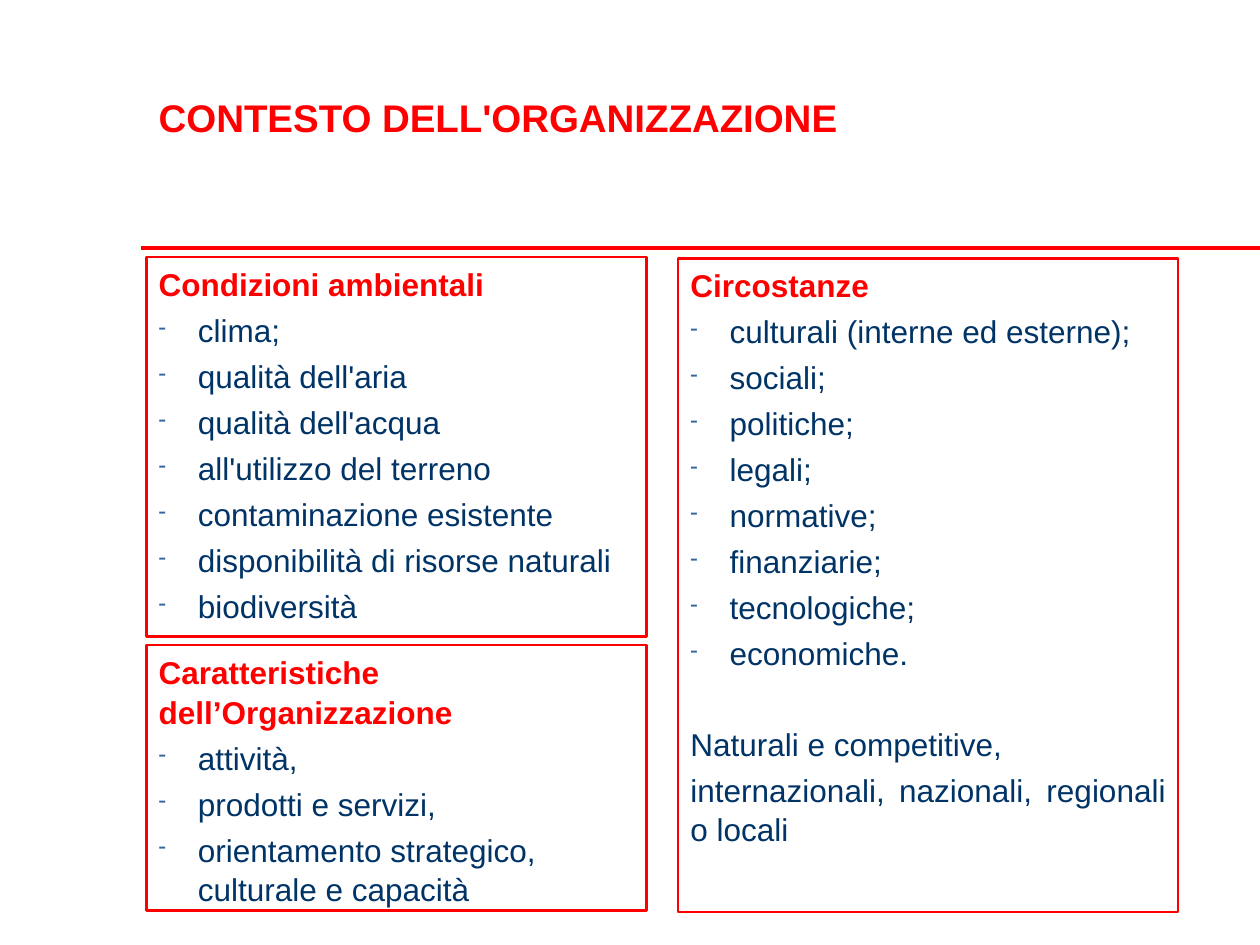
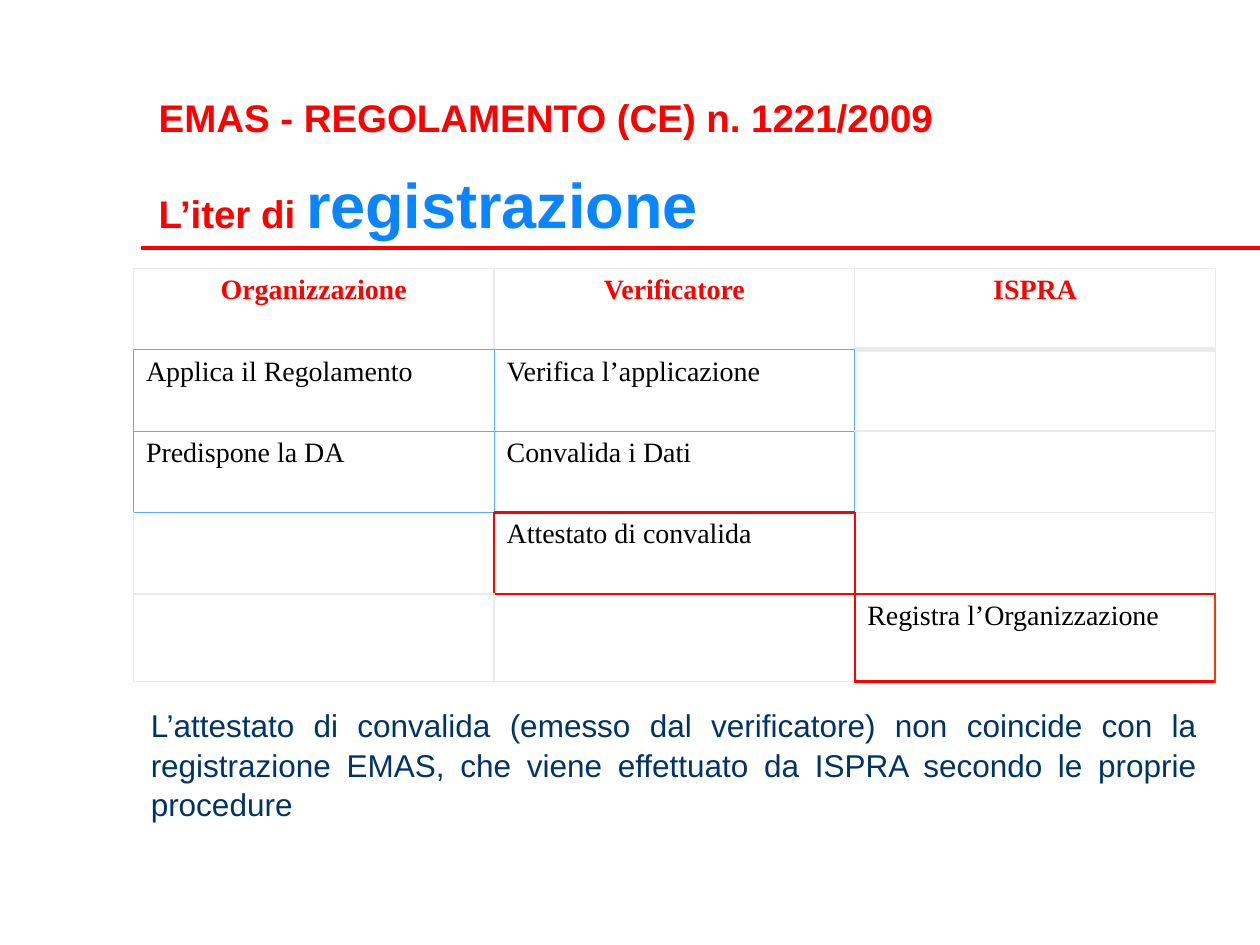
from typing import NamedTuple

import pptx
import pptx.dml.color
import pptx.enum.shapes
import pptx.enum.text
import pptx.oxml
import pptx.oxml.ns
import pptx.util
from lxml import etree

Cm, Pt = pptx.util.Cm, pptx.util.Pt
ALIGN = pptx.enum.text.PP_ALIGN
qn = pptx.oxml.ns.qn

COLORS = {
    "red": "FF0000",
    "orange_red": "FF3300",
    "navy": "003366",
    "bullet": "336699",
    "bright_blue": "0A85FF",
    "light_blue": "5CADFF",
    "grey": "EAEAEA",
    "white": "FFFFFF",
    "black": "000000",
}
SANS, SERIF = "Arial", "Times New Roman"
LINE_SPACING = 1.05
BODY_GAP = 3.6
BLANK_LINE_GAP = 29


class Panel(NamedTuple):
    left: float
    top: float
    width: float
    height: float
    heading: str
    items: list[str]
    closing: list[str] = []


class Border(NamedTuple):
    rank: int
    color: str
    width: float


PLAIN = Border(0, "grey", 1)
STEP = Border(1, "light_blue", 0.5)
OUTCOME = Border(2, "red", 1.5)

PANELS = [
    Panel(2.95, 5.18, 10.08, 7.65, "Condizioni ambientali",
          ["clima;", "qualità dell'aria", "qualità dell'acqua",
           "all'utilizzo del terreno", "contaminazione esistente",
           "disponibilità di risorse naturali", "biodiversità"]),
    Panel(13.67, 5.21, 10.08, 13.18, "Circostanze",
          ["culturali (interne ed esterne);", "sociali;", "politiche;",
           "legali;", "normative;", "finanziarie;", "tecnologiche;",
           "economiche."],
          ["Naturali e competitive,",
           "internazionali, nazionali, regionali o locali"]),
    Panel(2.95, 13, 10.08, 5.36, "Caratteristiche dell’Organizzazione",
          ["attività,", "prodotti e servizi,",
           "orientamento strategico, culturale e capacità"]),
]

PROCEDURE = [
    ["Organizzazione", "Verificatore", "ISPRA"],
    ["Applica il Regolamento", "Verifica l’applicazione", ""],
    ["Predispone la DA", "Convalida i Dati", ""],
    ["", "Attestato di convalida", ""],
    ["", "", "Registra l’Organizzazione"],
]
ROW_HEIGHTS = [1.64, 1.64, 1.64, 1.64, 1.77]
COL_WIDTH = 7.27
OUTCOME_CELLS = {(3, 1), (4, 2)}
# Neighbouring cell across each side, in the order the borders are stored
SIDES = {"L": (0, -1), "R": (0, 1), "T": (-1, 0), "B": (1, 0)}
SPECIAL_EDGES = {
    (0, 2, "B"): Border(0, "grey", 3),
    (1, 2, "T"): Border(0, "grey", 3),
    (4, 2, "R"): Border(2, "orange_red", 1.5),
}


def rgb(name: str) -> pptx.dml.color.RGBColor:
    return pptx.dml.color.RGBColor.from_string(COLORS[name])


def style(p, size: float, color: str, bold: bool = False, font: str = SANS) -> None:
    p.font.name, p.font.size, p.font.bold = font, Pt(size), bold
    p.font.color.rgb = rgb(color)


def add_paragraph(tf, text: str, size: float, color: str, bold: bool = False,
                  gap: float = BODY_GAP, align=ALIGN.JUSTIFY):
    """Add a paragraph, using the frame's first one while it is still empty."""
    first = tf.paragraphs[0]
    p = tf.add_paragraph() if first.runs else first
    p.add_run().text = text
    p.alignment = align
    p.line_spacing = LINE_SPACING
    p.space_before = Pt(gap if p.runs and first.runs and len(tf.paragraphs) > 1 else 0)
    style(p, size, color, bold)
    return p


def add_bullet(p) -> None:
    pPr = p._p.get_or_add_pPr()
    pPr.set("marL", str(Cm(0.79)))
    pPr.set("indent", str(-Cm(0.79)))
    clr = etree.Element(qn("a:buClr"))
    etree.SubElement(clr, qn("a:srgbClr"), val=COLORS["bullet"])
    size = etree.Element(qn("a:buSzPct"), val="70000")
    char = etree.Element(qn("a:buChar"), char="-")
    defaults = pPr.find(qn("a:defRPr"))
    for el in (clr, size, char):
        defaults.addprevious(el)


def add_text_box(slide, left: float, top: float, width: float, height: float):
    tf = slide.shapes.add_textbox(Cm(left), Cm(top), Cm(width), Cm(height)).text_frame
    tf.word_wrap = True
    return tf


def add_titled_slide(prs, *lines: str, height: float):
    """Add a blank slide with the red title lines and the rule below them."""
    slide = prs.slides.add_slide(prs.slide_layouts[6])
    rule = slide.shapes.add_connector(
        pptx.enum.shapes.MSO_CONNECTOR.STRAIGHT, Cm(2.84), Cm(5), Cm(25.4), Cm(5))
    rule.line.color.rgb, rule.line.width = rgb("red"), Pt(2.75)
    etree.SubElement(rule._element.spPr, qn("a:effectLst"))
    tf = add_text_box(slide, 2.95, 1.73, 19.13, height)
    for line in lines:
        add_paragraph(tf, line, 22, "red", True, gap=12, align=ALIGN.LEFT)
    return slide, tf


def add_panel(slide, panel: Panel) -> None:
    sp = slide.shapes.add_shape(
        pptx.enum.shapes.MSO_SHAPE.RECTANGLE, Cm(panel.left), Cm(panel.top),
        Cm(panel.width), Cm(panel.height))
    sp.shadow.inherit = False
    sp.fill.background()
    sp.line.color.rgb, sp.line.width = rgb("red"), Pt(1.5)
    tf = sp.text_frame
    tf.word_wrap = True
    tf.vertical_anchor = pptx.enum.text.MSO_ANCHOR.TOP
    add_paragraph(tf, panel.heading, 18, "red", True)
    for item in panel.items:
        add_bullet(add_paragraph(tf, item, 18, "navy", align=ALIGN.LEFT))
    for i, text in enumerate(panel.closing):
        add_paragraph(tf, text, 18, "navy", gap=BODY_GAP if i else BLANK_LINE_GAP)


def cell_border(row: int, col: int) -> Border:
    if (row, col) in OUTCOME_CELLS:
        return OUTCOME
    inside = 0 < row < len(PROCEDURE) and 0 <= col < len(PROCEDURE[0])
    return STEP if inside and PROCEDURE[row][col] else PLAIN


def draw_borders(cell, row: int, col: int) -> None:
    """Give each side the stronger border of the two cells that share it."""
    tcPr = cell._tc.get_or_add_tcPr()
    for side, (dr, dc) in SIDES.items():
        shared = max(cell_border(row, col), cell_border(row + dr, col + dc))
        border = SPECIAL_EDGES.get((row, col, side), shared)
        ln = etree.SubElement(tcPr, qn(f"a:ln{side}"), w=str(Pt(border.width)))
        fill = etree.SubElement(ln, qn("a:solidFill"))
        etree.SubElement(fill, qn("a:srgbClr"), val=COLORS[border.color])


def add_procedure_table(slide) -> None:
    n_cols = len(PROCEDURE[0])
    table = slide.shapes.add_table(
        len(PROCEDURE), n_cols, Cm(2.69), Cm(5.41),
        Cm(COL_WIDTH * n_cols), Cm(sum(ROW_HEIGHTS))).table
    table.first_row = table.horz_banding = False
    for column in table.columns:
        column.width = Cm(COL_WIDTH)
    for r, (texts, height) in enumerate(zip(PROCEDURE, ROW_HEIGHTS)):
        table.rows[r].height = Cm(height)
        for c, text in enumerate(texts):
            cell = table.cell(r, c)
            draw_borders(cell, r, c)
            cell.fill.solid()
            cell.fill.fore_color.rgb = rgb("white")
            if text:
                header = r == 0
                cell.text = text
                p = cell.text_frame.paragraphs[0]
                p.alignment = ALIGN.CENTER if header else ALIGN.LEFT
                style(p, 16, "red" if header else "black", header, SERIF)


def build_context_slide(prs) -> None:
    slide, _ = add_titled_slide(prs, "CONTESTO DELL'ORGANIZZAZIONE", height=1.19)
    for panel in PANELS:
        add_panel(slide, panel)


def build_registration_slide(prs) -> None:
    slide, title = add_titled_slide(
        prs, "EMAS - REGOLAMENTO (CE) n. 1221/2009", "L’iter di ", height=3.18)
    r = title.paragraphs[1].add_run()
    r.text = "registrazione"
    r.font.size, r.font.color.rgb = Pt(36), rgb("bright_blue")
    add_procedure_table(slide)
    note = add_text_box(slide, 2.79, 14.07, 21.59, 2.72)
    add_paragraph(
        note, "L’attestato di convalida (emesso dal verificatore) non coincide con la "
        "registrazione EMAS, che viene effettuato da ISPRA secondo le proprie procedure",
        18, "navy")


def main() -> None:
    prs = pptx.Presentation()
    prs.slide_width, prs.slide_height = Cm(25.4), Cm(19.05)
    build_context_slide(prs)
    build_registration_slide(prs)
    prs.save("out.pptx")


if __name__ == "__main__":
    main()
